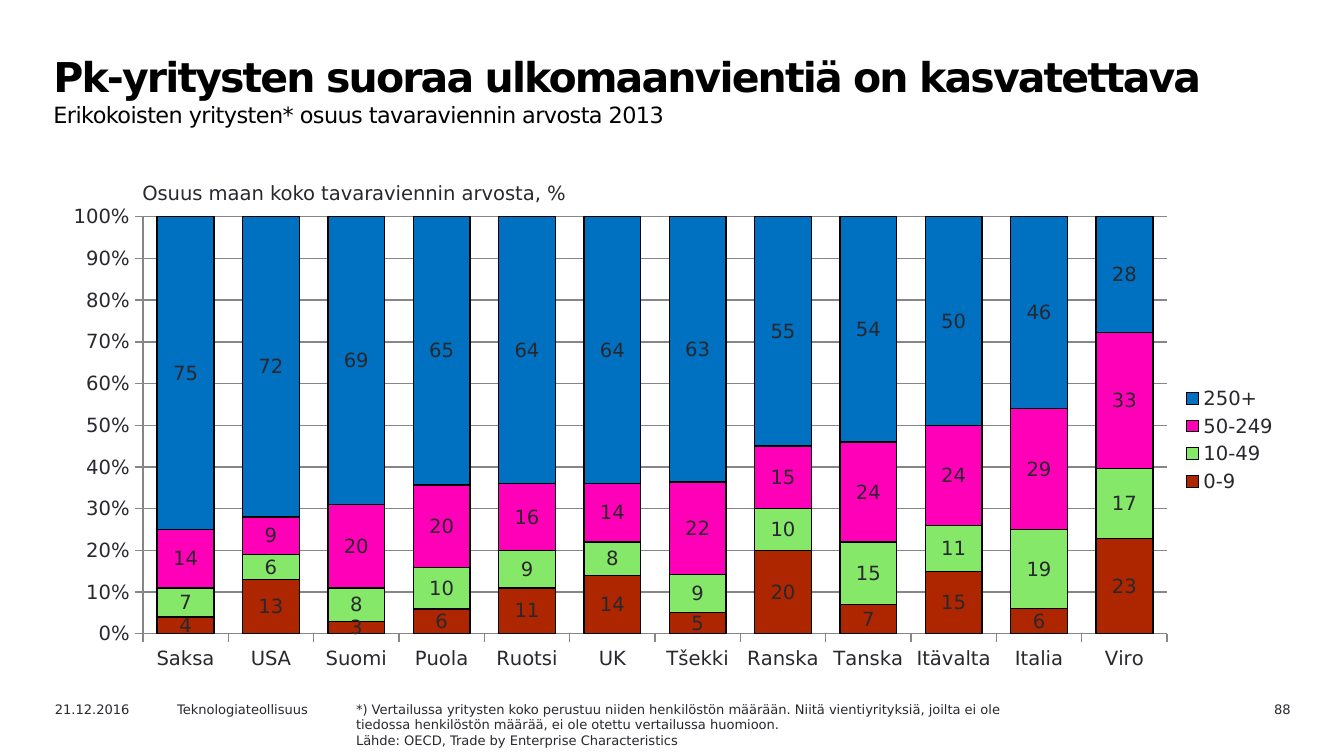
from dataclasses import dataclass

from lxml.etree import SubElement
from pptx import Presentation
from pptx.chart.data import CategoryChartData
from pptx.dml.color import RGBColor
from pptx.enum.chart import XL_CHART_TYPE, XL_LABEL_POSITION, XL_LEGEND_POSITION, XL_TICK_MARK
from pptx.enum.text import PP_ALIGN
from pptx.oxml.ns import qn
from pptx.util import Cm, Pt


@dataclass(frozen=True)
class Theme:
    font: str = "DejaVu Sans"
    ink: str = "29282E"
    black: str = "000000"
    grid: str = "868686"
    title_size: float = 22
    subtitle_size: float = 12
    chart_size: float = 10.5
    footer_size: float = 7
    hairline: float = 0.75


THEME = Theme()

COUNTRIES = ["Saksa", "USA", "Suomi", "Puola", "Ruotsi", "UK", "Tšekki",
             "Ranska", "Tanska", "Itävalta", "Italia", "Viro"]
SIZE_CLASSES = [
    ("0-9", "AE2600", (4, 13, 3, 6, 11, 14, 5, 20, 7, 15, 6, 23)),
    ("10-49", "85E869", (7, 6, 8, 10, 9, 8, 9, 10, 15, 11, 19, 17)),
    ("50-249", "FF00B8", (14, 9, 20, 20, 16, 14, 22, 15, 24, 24, 29, 33)),
    ("250+", "0070C0", (75, 72, 69, 65, 64, 64, 63, 55, 54, 50, 46, 28)),
]
FOOTNOTE = [
    "*) Vertailussa yritysten koko perustuu niiden henkilöstön määrään. "
    "Niitä vientiyrityksiä, joilta ei ole",
    "tiedossa henkilöstön määrää, ei ole otettu vertailussa huomioon.",
    "Lähde: OECD, Trade by Enterprise Characteristics",
]


def style_font(font, size, color=THEME.ink, bold=False):
    font.name = THEME.font
    font.size = Pt(size)
    font.bold = bold
    font.color.rgb = RGBColor.from_string(color)


def add_paragraph(frame, text, *, size, color=THEME.ink, bold=False,
                  align=PP_ALIGN.LEFT, indent=0, line_spacing=None, tracking=0):
    first = frame.paragraphs[0]
    paragraph = frame.add_paragraph() if first.runs else first
    paragraph.alignment = align
    if line_spacing:
        paragraph.line_spacing = Pt(line_spacing)
    if indent:
        paragraph._p.get_or_add_pPr().set("marL", str(Cm(indent)))
    run = paragraph.add_run()
    run.text = text
    style_font(run.font, size, color, bold)
    if tracking:
        run._r.get_or_add_rPr().set("spc", str(round(tracking * 100)))


def add_frame(slide, left, top, width, height, wrap=True):
    box = slide.shapes.add_textbox(Cm(left), Cm(top), Cm(width), Cm(height))
    box.text_frame.word_wrap = wrap
    return box.text_frame


def add_heading(slide):
    heading = add_frame(slide, 0.71, 0.83, 22.63, 1.8)
    add_paragraph(heading, "Pk-yritysten suoraa ulkomaanvientiä on kasvatettava",
                  size=THEME.title_size, color=THEME.black, bold=True,
                  indent=0.05, line_spacing=27, tracking=-1)
    add_paragraph(heading, "Erikokoisten yritysten* osuus tavaraviennin arvosta 2013",
                  size=THEME.subtitle_size, color=THEME.black,
                  indent=0.05, tracking=-0.3)


def add_footer(slide):
    top = 13.13
    fields = [
        (0.79, 2.54, 0.46, PP_ALIGN.LEFT, ["21.12.2016"]),
        (3.1, 3.61, 0.46, PP_ALIGN.LEFT, ["Teknologiateollisuus"]),
        (6.48, 15.39, 1.14, PP_ALIGN.LEFT, FOOTNOTE),
        (22.25, 2.39, 0.46, PP_ALIGN.RIGHT, ["88"]),
    ]
    for left, width, height, align, lines in fields:
        field = add_frame(slide, left, top, width, height)
        for line in lines:
            add_paragraph(field, line, size=THEME.footer_size, align=align)


def set_plot_area(chart, **fractions):
    plot_area = chart._chartSpace.chart.plotArea
    layout = plot_area.find(qn("c:layout"))
    if layout is None:
        layout = SubElement(plot_area, qn("c:layout"))
        plot_area.insert(0, layout)
    manual = SubElement(layout, qn("c:manualLayout"))
    settings = {"layoutTarget": "inner", "xMode": "edge", "yMode": "edge", **fractions}
    for tag, value in settings.items():
        SubElement(manual, qn(f"c:{tag}")).set("val", str(value))


def style_line(line, color):
    line.color.rgb = RGBColor.from_string(color)
    line.width = Pt(THEME.hairline)


def style_axis(axis):
    axis.major_tick_mark = XL_TICK_MARK.OUTSIDE
    axis.minor_tick_mark = XL_TICK_MARK.NONE
    style_font(axis.tick_labels.font, THEME.chart_size)
    style_line(axis.format.line, THEME.grid)


def style_series(series, color):
    series.format.fill.solid()
    series.format.fill.fore_color.rgb = RGBColor.from_string(color)
    style_line(series.format.line, THEME.black)
    labels = series.data_labels
    labels.show_value = True
    labels.number_format = "#,##0"
    labels.number_format_is_linked = False
    labels.position = XL_LABEL_POSITION.CENTER
    style_font(labels.font, THEME.chart_size)


def add_export_chart(slide):
    shares = CategoryChartData()
    shares.categories = COUNTRIES
    for name, _, values in SIZE_CLASSES:
        shares.add_series(name, values)
    chart = slide.shapes.add_chart(
        XL_CHART_TYPE.COLUMN_STACKED_100,
        Cm(1.07), Cm(3.73), Cm(23.32), Cm(9.17), shares).chart
    chart.has_title = False
    style_font(chart.font, THEME.chart_size)
    set_plot_area(chart, x=0.07, y=0.04, w=0.83, h=0.86)

    columns = chart.plots[0]
    columns.gap_width = 50
    columns.overlap = 100
    columns.vary_by_categories = False
    for series, (_, color, _) in zip(columns.series, SIZE_CLASSES):
        style_series(series, color)

    style_axis(chart.category_axis)
    style_axis(chart.value_axis)
    chart.value_axis.maximum_scale = 1
    chart.value_axis.major_unit = 0.1
    chart.value_axis.tick_labels.number_format = "0%"
    chart.value_axis.tick_labels.number_format_is_linked = False
    style_line(chart.value_axis.major_gridlines.format.line, THEME.grid)

    chart.has_legend = True
    chart.legend.position = XL_LEGEND_POSITION.RIGHT
    chart.legend.include_in_layout = False
    style_font(chart.legend.font, THEME.chart_size)


def main():
    deck = Presentation()
    deck.slide_width, deck.slide_height = Cm(25.4), Cm(14.29)
    slide = deck.slides.add_slide(deck.slide_layouts[6])
    add_footer(slide)
    add_heading(slide)
    add_export_chart(slide)
    axis_caption = add_frame(slide, 2.44, 3.3, 8.79, 0.71, wrap=False)
    add_paragraph(axis_caption, "Osuus maan koko tavaraviennin arvosta, %",
                  size=THEME.chart_size)
    deck.save("out.pptx")


if __name__ == "__main__":
    main()
